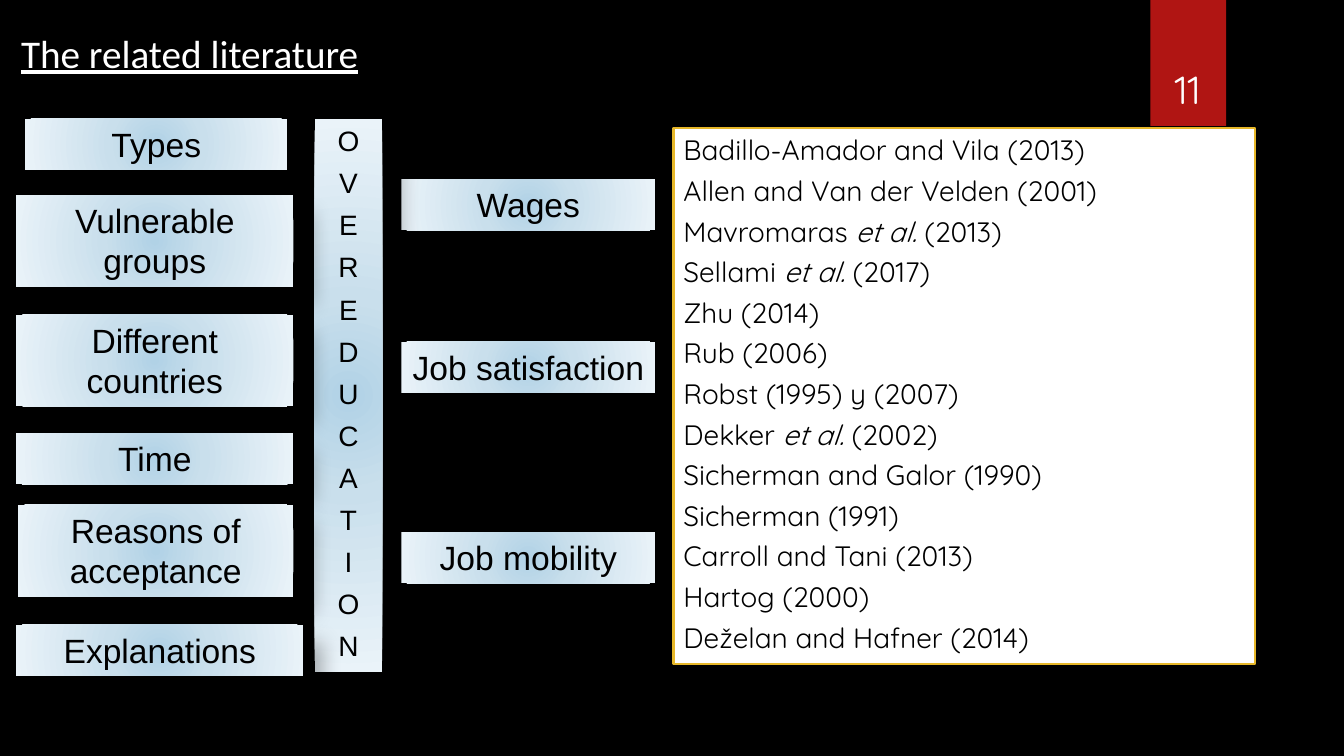
from dataclasses import dataclass

from pptx import Presentation, util as u
from pptx.dml.color import RGBColor
from pptx.enum import shapes, text
from pptx.oxml import parse_xml
from pptx.oxml.ns import nsdecls, qn

BLACK = RGBColor(0, 0, 0)
WHITE = RGBColor(255, 255, 255)
RED = RGBColor(0xB0, 0x15, 0x13)
GOLD = RGBColor(0xE6, 0xB7, 0x29)
# Position in percent and colour, from the centre outwards
GLOW = [
    (0, RGBColor(0xB1, 0xD2, 0xE6)),
    (35, RGBColor(0xC9, 0xDF, 0xEC)),
    (100, RGBColor(0xEA, 0xF3, 0xF9)),
]

SLIDE_WIDTH = u.Inches(13.333)
SLIDE_HEIGHT = u.Inches(7.5)


@dataclass
class Area:
    """Left, top, width and height in percent of the slide's size."""
    left: float
    top: float
    width: float
    height: float

    def lengths(self) -> list[int]:
        return [
            round(SLIDE_WIDTH * self.left / 100),
            round(SLIDE_HEIGHT * self.top / 100),
            round(SLIDE_WIDTH * self.width / 100),
            round(SLIDE_HEIGHT * self.height / 100),
        ]


@dataclass
class Style:
    font: str
    size: float
    color: RGBColor
    align: text.PP_ALIGN = text.PP_ALIGN.CENTER
    underline: bool = False
    before: float = 0
    after: float = 0


@dataclass
class Topic:
    lines: list[str]
    area: Area
    style: Style


LABEL = Style("Arial", 24, BLACK)
LETTER = Style("Arial", 20, BLACK, before=6)
REFERENCE = Style("Quicksand", 20, BLACK, text.PP_ALIGN.LEFT, after=5)
TITLE = Style("Calibri", 28, WHITE, text.PP_ALIGN.LEFT, underline=True)
NUMBER = Style("Quicksand", 28, WHITE)

ONE_LINE, TWO_LINES = 6.73, 12.13
CAUSE_LEFT, CAUSE_WIDTH = 1.2, 20.63
EFFECT_LEFT, EFFECT_WIDTH = 29.86, 18.9


def cause(label: str, top: float, height: float = ONE_LINE,
          left: float = CAUSE_LEFT, width: float = CAUSE_WIDTH) -> Topic:
    return Topic([label], Area(left, top, width, height), LABEL)


def effect(label: str, top: float) -> Topic:
    return Topic([label], Area(EFFECT_LEFT, top, EFFECT_WIDTH, ONE_LINE), LABEL)


# Back to front: shadows fall on the boxes listed earlier
TOPICS = [
    cause("Types", 15.73, left=1.88, width=19.5),
    effect("Wages", 23.73),
    Topic(list("OVEREDUCATION"), Area(23.41, 15.73, 5.03, 73.2), LETTER),
    effect("Job satisfaction", 45.2),
    cause("Vulnerable groups", 25.8, TWO_LINES),
    cause("Different countries", 41.6, TWO_LINES),
    effect("Job mobility", 70.4),
    cause("Time", 57.33),
    cause("Reasons of acceptance", 66.8, TWO_LINES, left=1.35, width=20.48),
    cause("Explanations", 82.67, width=21.38),
]

REFERENCES = [
    "Badillo-Amador and Vila (2013)",
    "Allen and Van der Velden (2001)",
    "Mavromaras et al. (2013)",
    "Sellami et al. (2017)",
    "Zhu (2014)",
    "Rub (2006)",
    "Robst (1995) y (2007)",
    "Dekker et al. (2002)",
    "Sicherman and Galor (1990)",
    "Sicherman (1991)",
    "Carroll and Tani (2013)",
    "Hartog (2000)",
    "Deželan and Hafner (2014)",
]
ET_AL = "et al."


def write(shape, lines: list[str], style: Style,
          anchor=text.MSO_ANCHOR.TOP, grow: bool = True) -> None:
    """Fill the shape with one paragraph a line, setting "et al." in italics."""
    frame = shape.text_frame
    frame.word_wrap = True
    frame.vertical_anchor = anchor
    if grow:
        frame.auto_size = text.MSO_AUTO_SIZE.SHAPE_TO_FIT_TEXT
    for index, line in enumerate(lines):
        paragraph = frame.add_paragraph() if index else frame.paragraphs[0]
        paragraph.alignment = style.align
        paragraph.space_before = u.Pt(style.before if index else 0)
        paragraph.space_after = u.Pt(style.after)
        font = paragraph.font
        font.name, font.size = style.font, u.Pt(style.size)
        font.color.rgb = style.color
        font.underline = style.underline
        start, et_al, end = line.partition(ET_AL)
        for part in filter(None, (start, et_al, end)):
            run = paragraph.add_run()
            run.text = part
            if part == ET_AL:
                run.font.italic = True


def add_box(slide, area: Area, fill: RGBColor):
    shape = slide.shapes.add_shape(shapes.MSO_SHAPE.RECTANGLE, *area.lengths())
    shape.fill.solid()
    shape.fill.fore_color.rgb = fill
    shape.line.fill.background()
    shape.shadow.inherit = False
    return shape


def add_glow_and_shadow(shape) -> None:
    properties = shape._element.spPr
    stops = "".join(
        f'<a:gs pos="{position * 1000}"><a:srgbClr val="{color}"/></a:gs>'
        for position, color in GLOW)
    gradient = parse_xml(
        f'<a:gradFill {nsdecls("a")} rotWithShape="1"><a:gsLst>{stops}</a:gsLst>'
        '<a:path path="circle"><a:fillToRect l="50000" t="50000" r="50000" b="50000"/>'
        '</a:path></a:gradFill>')
    properties.replace(properties.find(qn("a:solidFill")), gradient)
    properties.find(qn("a:effectLst")).append(parse_xml(
        f'<a:outerShdw {nsdecls("a")} blurRad="{u.Pt(15)}" dist="{u.Pt(18)}" '
        'dir="2700000" algn="tl" rotWithShape="0"><a:srgbClr val="000000">'
        '<a:alpha val="30000"/></a:srgbClr></a:outerShdw>'))


def main() -> None:
    presentation = Presentation()
    presentation.slide_width = SLIDE_WIDTH
    presentation.slide_height = SLIDE_HEIGHT
    slide = presentation.slides.add_slide(presentation.slide_layouts[6])
    slide.background.fill.solid()
    slide.background.fill.fore_color.rgb = BLACK

    add_box(slide, Area(85.6, 0, 5.63, 16.67), RED)
    title = slide.shapes.add_textbox(*Area(0.83, 3.2, 33, 7.6).lengths())
    write(title, ["The related literature"], TITLE)

    for topic in TOPICS:
        box = add_box(slide, topic.area, WHITE)
        add_glow_and_shadow(box)
        write(box, topic.lines, topic.style)

    references = add_box(slide, Area(50.11, 16.93, 43.29, 70.93), WHITE)
    references.line.color.rgb = GOLD
    references.line.width = u.Pt(1.5)
    write(references, REFERENCES, REFERENCE)

    number = slide.shapes.add_textbox(*Area(84.92, 4.27, 6.9, 11.2).lengths())
    write(number, ["11"], NUMBER, text.MSO_ANCHOR.BOTTOM, grow=False)

    presentation.save("out.pptx")


if __name__ == "__main__":
    main()
